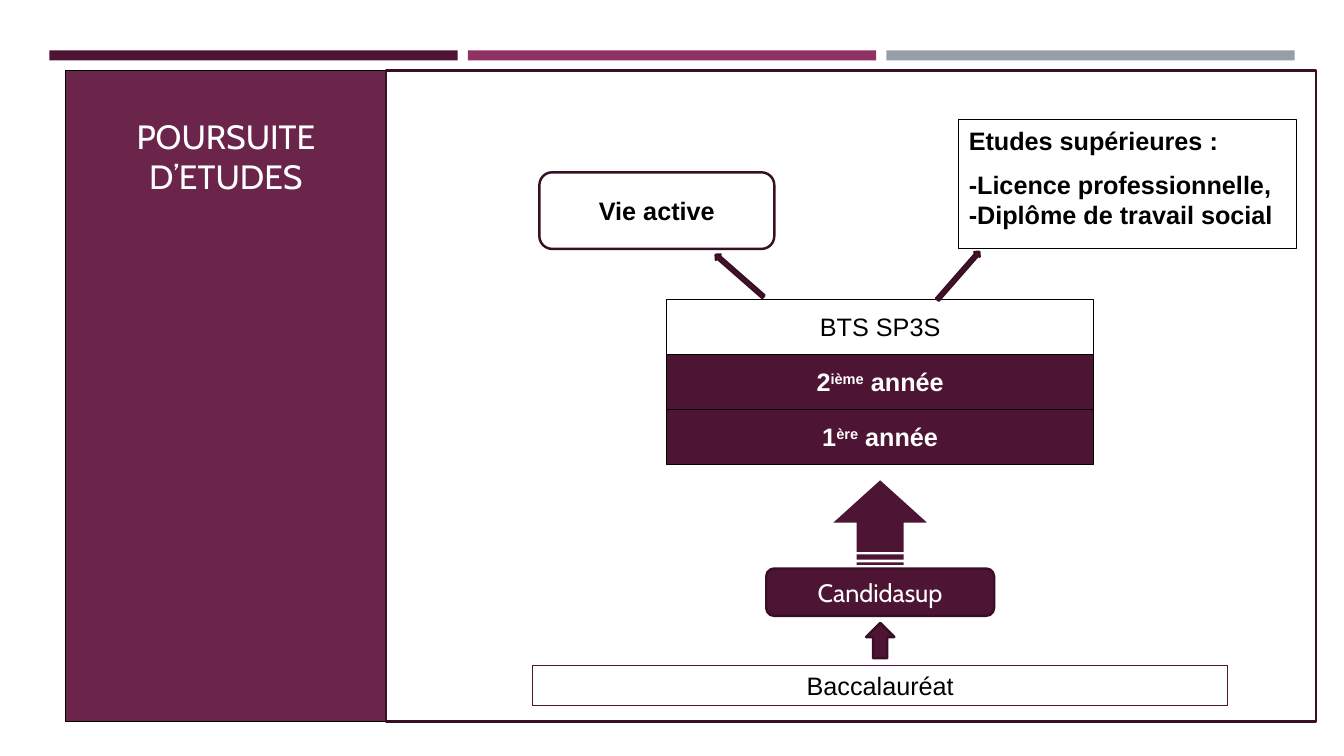
from dataclasses import dataclass

from pptx import Presentation
from pptx import util as u
from pptx.dml.color import RGBColor
from pptx.enum import dml, shapes, text


@dataclass(frozen=True)
class Theme:
    """Colours, fonts and sizes of the slide."""
    plum: str = "4D1434"
    sidebar: str = "6C254A"
    rose: str = "903163"
    grey: str = "969FA7"
    outline: str = "390F26"
    black: str = "000000"
    white: str = "FFFFFF"
    heading_font: str = "Cabin"
    body_font: str = "Arial"
    title_size: int = 24
    body_size: int = 18
    thin: float = 0.75
    thick: float = 1.75


@dataclass(frozen=True)
class Box:
    """A rectangle in inches."""
    left: float
    top: float
    width: float
    height: float

    def inner(self, left, top, width, height):
        """Return a box placed relative to this one."""
        return Box(self.left + left, self.top + top, width, height)

    def centred(self, axis, top, width, height):
        """Return an inner box centred on a vertical axis."""
        return self.inner(axis - width / 2, top, width, height)

    def lengths(self):
        """Return the four lengths as Inches."""
        return [u.Inches(n) for n in (self.left, self.top, self.width, self.height)]


THEME = Theme()
KIND = shapes.MSO_SHAPE


def paint(shape, fill=None, line=None, weight=THEME.thin):
    """Set the fill and line of a shape."""
    if fill:
        shape.fill.solid()
        shape.fill.fore_color.rgb = RGBColor.from_string(fill)
    else:
        shape.fill.background()
    if line:
        shape.line.color.rgb = RGBColor.from_string(line)
        shape.line.width = u.Pt(weight)
    else:
        shape.line.fill.background()


def add_block(slide, kind, box, fill=None, line=None, weight=THEME.thin, rotation=0):
    """Add a painted preset shape without shadow."""
    shape = slide.shapes.add_shape(kind, *box.lengths())
    shape.shadow.inherit = False
    shape.rotation = rotation
    paint(shape, fill, line, weight)
    return shape


def add_run(paragraph, words, color, font=THEME.body_font, size=THEME.body_size,
            bold=False, raised=False):
    """Add one formatted run to a paragraph."""
    run = paragraph.add_run()
    run.text = words
    run.font.name = font
    run.font.size = u.Pt(size)
    run.font.bold = bold
    run.font.color.rgb = RGBColor.from_string(color)
    if raised:
        run.font._element.set("baseline", "30000")


def label(shape, words, color=THEME.black, wrap=True, **style):
    """Centre text in a shape, raising every second piece."""
    frame = shape.text_frame
    frame.word_wrap = wrap
    frame.vertical_anchor = text.MSO_ANCHOR.MIDDLE
    paragraph = frame.paragraphs[0]
    paragraph.alignment = text.PP_ALIGN.CENTER
    for index, piece in enumerate(words):
        add_run(paragraph, piece, color, raised=index % 2 == 1, **style)


def add_top_bars(slide, box):
    """Draw three equal bars across the box."""
    width, gap = 4.05, 0.1
    for index, color in enumerate((THEME.plum, THEME.rose, THEME.grey)):
        bar = box.inner(index * (width + gap), 0, width, box.height)
        add_block(slide, KIND.RECTANGLE, bar, color)


def add_sidebar(slide, box):
    """Turn the title placeholder into the coloured sidebar."""
    title = slide.shapes.title
    title.left, title.top, title.width, title.height = box.lengths()
    paint(title, THEME.sidebar, THEME.black)
    frame = title.text_frame
    frame.word_wrap = True
    frame.auto_size = text.MSO_AUTO_SIZE.NONE
    frame.vertical_anchor = text.MSO_ANCHOR.TOP
    frame.margin_top = u.Inches(0.45)
    paragraph = frame.paragraphs[0]
    paragraph.alignment = text.PP_ALIGN.CENTER
    add_run(paragraph, "POURSUITE D’ETUDES", THEME.white,
            THEME.heading_font, THEME.title_size)


def add_entry(slide, box, axis):
    """Draw the way from the baccalauréat up to the course."""
    school = add_block(slide, KIND.RECTANGLE, box.centred(axis, 5.9, 6.89, 0.4),
                       line=THEME.plum)
    label(school, ["Baccalauréat"])
    platform = add_block(slide, KIND.ROUNDED_RECTANGLE, box.centred(axis, 4.94, 2.26, 0.47),
                         THEME.plum, THEME.outline, THEME.thick)
    label(platform, ["Candidasup"], THEME.white, font=THEME.heading_font)
    add_block(slide, KIND.UP_ARROW, box.centred(axis, 5.48, 0.28, 0.35),
              THEME.plum, THEME.outline, THEME.thick)
    arrow = add_block(slide, KIND.STRIPED_RIGHT_ARROW, box.centred(axis, 4.02, 0.84, 0.93),
                      rotation=270)
    arrow.fill.patterned()
    arrow.fill.pattern = dml.MSO_PATTERN.DARK_HORIZONTAL
    arrow.fill.fore_color.rgb = RGBColor.from_string(THEME.plum)
    arrow.fill.back_color.rgb = RGBColor.from_string(THEME.white)


def add_course(slide, box, axis):
    """Stack the course name and its two years."""
    height = 0.545
    rows = (
        (["BTS SP3S"], THEME.white, THEME.black, False),
        (["2", "ième", " année"], THEME.plum, THEME.white, True),
        (["1", "ère", " année"], THEME.plum, THEME.white, True),
    )
    for index, (words, fill, color, bold) in enumerate(rows):
        row = box.centred(axis, 2.27 + index * height, 4.24, height)
        shape = add_block(slide, KIND.RECTANGLE, row, fill, THEME.black)
        label(shape, words, color, wrap=False, bold=bold)


def add_outcomes(slide, box):
    """Draw the two outcomes and the arrows leading to them."""
    work = add_block(slide, KIND.ROUNDED_RECTANGLE, box.inner(1.52, 1.01, 2.33, 0.76),
                     THEME.white, THEME.outline, THEME.thick)
    label(work, ["Vie active"], bold=True)

    studies = add_block(slide, KIND.RECTANGLE, box.inner(5.68, 0.49, 3.35, 1.28),
                        line=THEME.black)
    frame = studies.text_frame
    frame.word_wrap = True
    frame.vertical_anchor = text.MSO_ANCHOR.TOP
    lines = ("Etudes supérieures :", "-Licence professionnelle,",
             "-Diplôme de travail social")
    for index, words in enumerate(lines):
        paragraph = frame.add_paragraph() if index else frame.paragraphs[0]
        paragraph.alignment = text.PP_ALIGN.LEFT
        paragraph.space_after = u.Pt(0 if index else 10)
        add_run(paragraph, words, THEME.black, bold=True)

    for left, rotation in ((3.47, 311.2), (5.64, 41.2)):
        add_block(slide, KIND.UP_ARROW, box.inner(left, 1.72, 0.07, 0.63),
                  THEME.plum, THEME.outline, THEME.thick, rotation)


def add_pathway(slide, box):
    """Draw the framed study pathway."""
    axis = 4.9
    add_block(slide, KIND.RECTANGLE, box, THEME.white, THEME.outline, THEME.thick)
    add_entry(slide, box, axis)
    add_course(slide, box, axis)
    add_outcomes(slide, box)


def main():
    """Build and save the presentation."""
    presentation = Presentation()
    presentation.slide_width = u.Inches(13.33)
    presentation.slide_height = u.Inches(7.5)
    slide = presentation.slides.add_slide(presentation.slide_layouts[5])
    add_top_bars(slide, Box(0.49, 0.5, 12.35, 0.1))
    add_sidebar(slide, Box(0.65, 0.7, 3.18, 6.46))
    add_pathway(slide, Box(3.83, 0.7, 9.22, 6.46))
    presentation.save("out.pptx")


if __name__ == "__main__":
    main()
